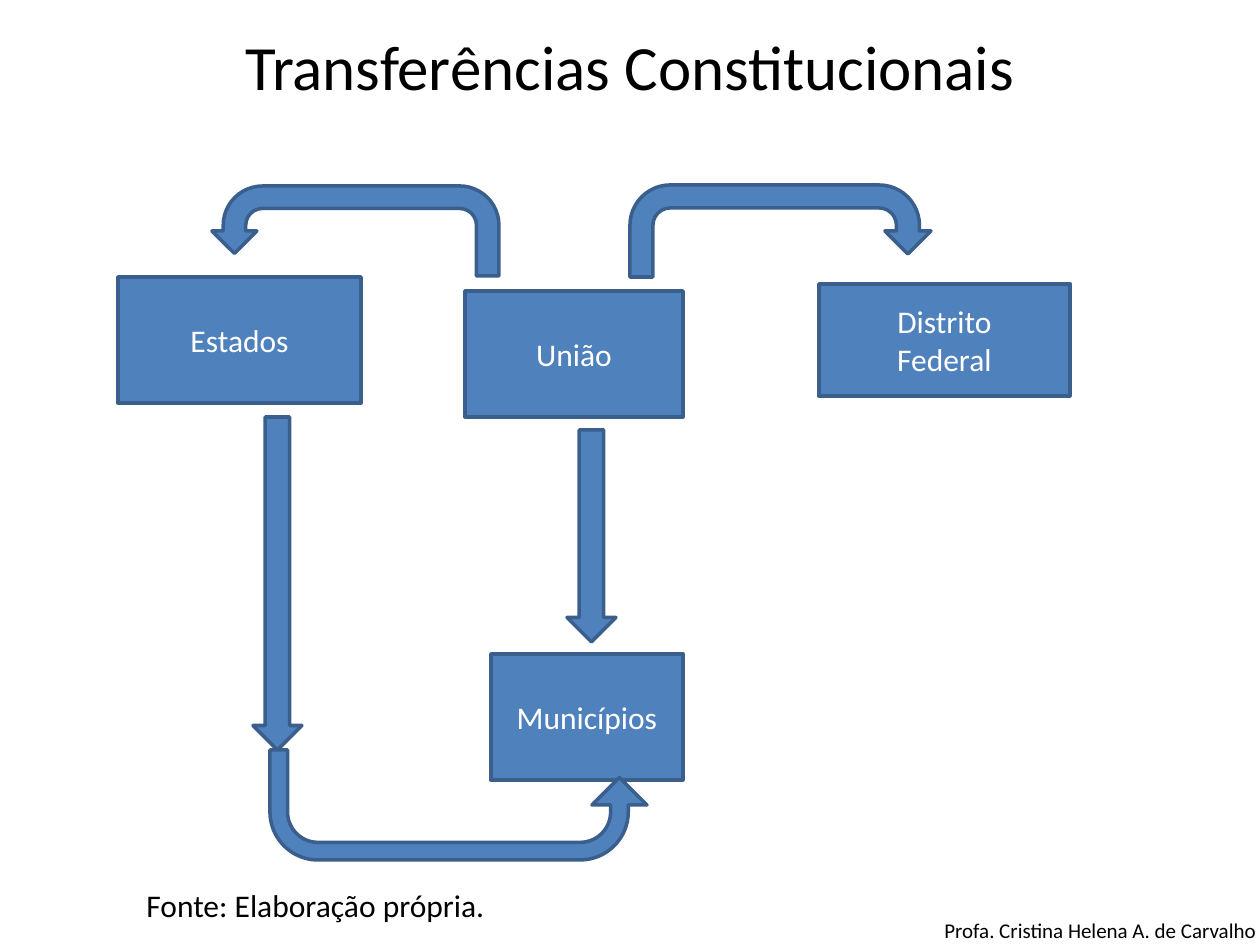
from dataclasses import dataclass

from pptx import Presentation
from pptx.dml.color import RGBColor
from pptx.enum.shapes import MSO_SHAPE as Geo
from pptx.enum.text import MSO_ANCHOR as Anchor, PP_ALIGN as Align
from pptx.util import Emu, Pt

SCALE = 914400 / 126  # EMU per px
BLUE = RGBColor(0x4F, 0x81, 0xBD)
EDGE = RGBColor(0x3A, 0x5F, 0x8C)
WHITE = RGBColor(0xFF, 0xFF, 0xFF)
BLACK = RGBColor(0, 0, 0)
FONT = "Calibri"


@dataclass(frozen=True)
class Rect:
    left: int
    top: int
    width: int
    height: int

    def emu(self) -> list[Emu]:
        return [px(v) for v in (self.left, self.top, self.width, self.height)]


@dataclass(frozen=True)
class Box:
    area: Rect
    lines: tuple[str, ...]


@dataclass(frozen=True)
class Arrow:
    area: Rect
    kind: Geo
    flip: str = ""
    shaft: float = 0.25


@dataclass(frozen=True)
class Label:
    area: Rect
    text: str
    size: int
    align: Align = Align.LEFT
    anchor: Anchor = Anchor.TOP


BOXES = [
    Box(Rect(465, 291, 218, 126), ("União",)),
    Box(Rect(819, 284, 251, 112), ("Distrito", "Federal")),
    Box(Rect(118, 277, 243, 126), ("Estados",)),
    Box(Rect(491, 654, 192, 126), ("Municípios",)),
]
ARROWS = [
    Arrow(Rect(253, 417, 49, 333), Geo.DOWN_ARROW, shaft=0.5),
    Arrow(Rect(270, 750, 377, 110), Geo.U_TURN_ARROW, "flipV", 0.16),
    Arrow(Rect(630, 185, 301, 92), Geo.U_TURN_ARROW),
    Arrow(Rect(212, 186, 287, 90), Geo.U_TURN_ARROW, "flipH"),
    Arrow(Rect(567, 430, 49, 212), Geo.DOWN_ARROW, shaft=0.5),
]
LABELS = [
    Label(Rect(932, 911, 343, 38), "Profa. Cristina Helena A. de Carvalho", 12),
    Label(Rect(5, 6, 1250, 118), "Transferências Constitucionais", 36,
          Align.CENTER, Anchor.MIDDLE),
    Label(Rect(134, 880, 397, 50), "Fonte: Elaboração própria.", 18),
]


def px(value: int) -> Emu:
    return Emu(round(value * SCALE))


def write(frame, lines: tuple[str, ...], size: int, color: RGBColor,
          align: Align, anchor: Anchor) -> None:
    frame.word_wrap = True
    frame.vertical_anchor = anchor
    for i, line in enumerate(lines):
        para = frame.add_paragraph() if i else frame.paragraphs[0]
        para.alignment = align
        run = para.add_run()
        run.text = line
        run.font.name = FONT
        run.font.size = Pt(size)
        run.font.color.rgb = color


def draw_shape(slide, kind: Geo, area: Rect):
    shape = slide.shapes.add_shape(kind, *area.emu())
    shape.shadow.inherit = False
    shape.fill.solid()
    shape.fill.fore_color.rgb = BLUE
    shape.line.color.rgb = EDGE
    shape.line.width = Pt(2)
    return shape


def draw_box(slide, box: Box) -> None:
    shape = draw_shape(slide, Geo.RECTANGLE, box.area)
    write(shape.text_frame, box.lines, 18, WHITE, Align.CENTER, Anchor.MIDDLE)


def draw_arrow(slide, arrow: Arrow) -> None:
    shape = draw_shape(slide, arrow.kind, arrow.area)
    shape.adjustments[0] = arrow.shaft
    if arrow.flip:
        shape._element.spPr.xfrm.set(arrow.flip, "1")


def draw_label(slide, label: Label) -> None:
    box = slide.shapes.add_textbox(*label.area.emu())
    write(box.text_frame, (label.text,), label.size, BLACK,
          label.align, label.anchor)


def main() -> None:
    deck = Presentation()
    deck.slide_width, deck.slide_height = px(1260), px(945)
    slide = deck.slides.add_slide(deck.slide_layouts[6])

    # Title, source and author
    for label in LABELS:
        draw_label(slide, label)
    # Levels of government
    for box in BOXES:
        draw_box(slide, box)
    # Transfers between them
    for arrow in ARROWS:
        draw_arrow(slide, arrow)

    deck.save("out.pptx")


if __name__ == "__main__":
    main()
